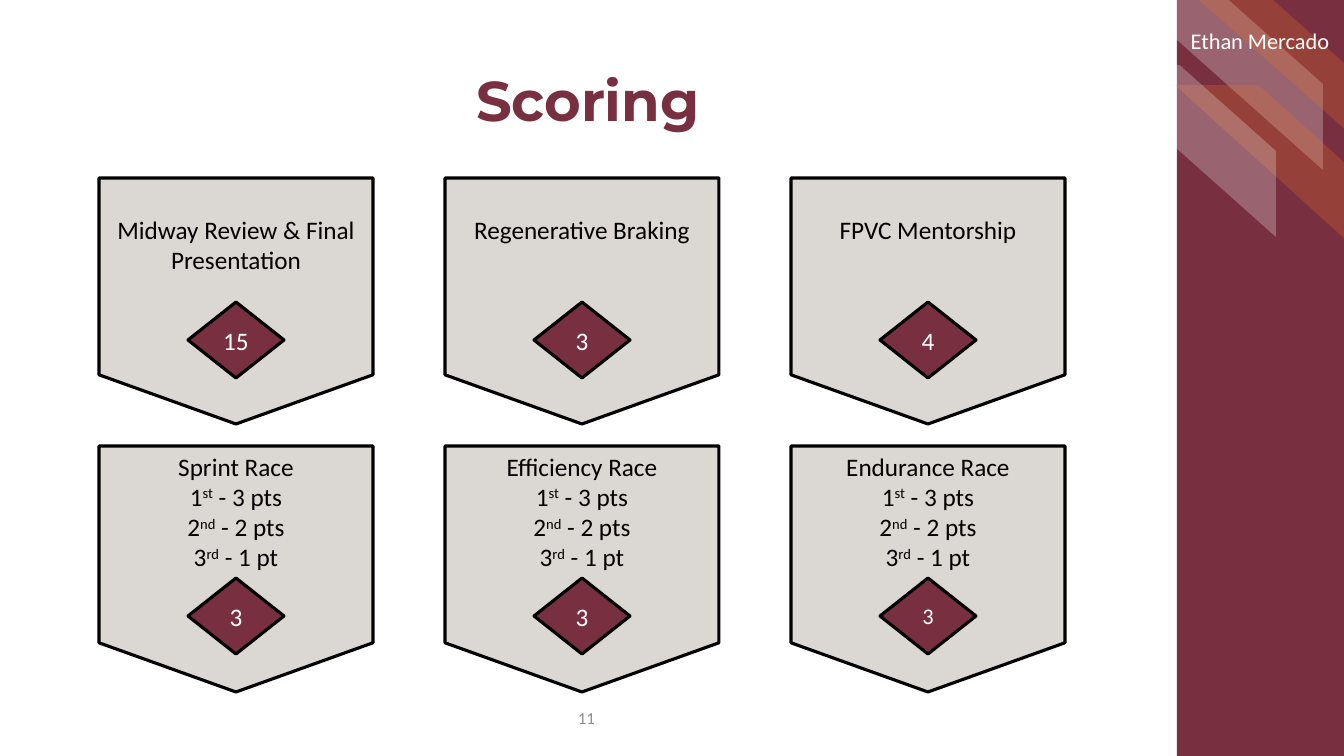
from lxml.etree import SubElement
from pptx import Presentation
from pptx.dml.color import RGBColor
from pptx.enum.shapes import MSO_SHAPE
from pptx.enum.text import MSO_ANCHOR, PP_ALIGN
from pptx.oxml.ns import qn
from pptx.util import Pt

SCALE = 12192000 / 1344
COLORS = {"garnet": "782F40", "orange": "EE7624", "white": "FFFFFF",
          "stone": "DBD7D2", "black": "000000", "gray": "8C8C8C"}

deck = Presentation()
deck.slide_width, deck.slide_height = int(1344 * SCALE), int(756 * SCALE)
slide = deck.slides.add_slide(deck.slide_layouts[6])


def draw(kind, box, fill=None, edge=None):
    """Add a preset shape, or a text box when kind is None, placed in px."""
    place = [int(n * SCALE) for n in box]
    if kind is None:
        return slide.shapes.add_textbox(*place)
    shape = slide.shapes.add_shape(kind, *place)
    shape.shadow.inherit = False
    shape.fill.solid()
    shape.fill.fore_color.rgb = RGBColor.from_string(COLORS[fill])
    if edge:
        shape.line.color.rgb = RGBColor.from_string(COLORS[edge])
        shape.line.width = Pt(2.25)
    else:
        shape.line.fill.background()
    return shape


def write(shape, lines, size, color, face="Calibri", bold=False,
          anchor=MSO_ANCHOR.MIDDLE, space=1.0):
    """Fill a shape with centred lines; each line is a list of runs.

    Every second run of a line is raised."""
    frame = shape.text_frame
    frame.word_wrap = True
    frame.vertical_anchor = anchor
    for i, line in enumerate(lines):
        para = frame.add_paragraph() if i else frame.paragraphs[0]
        para.alignment = PP_ALIGN.CENTER
        para.line_spacing = space
        for j, text in enumerate(line):
            run = para.add_run()
            run.text = text
            run.font.size = Pt(size)
            run.font.name = face
            run.font.bold = bold
            run.font.color.rgb = RGBColor.from_string(COLORS[color])
            if j % 2:
                run.font._element.set("baseline", "30000")


# Side bar with see-through stripes
draw(MSO_SHAPE.RECTANGLE, (1177, 0, 167, 756), "garnet")
stripes = [
    ((1130, -2, 193, 172), "white", 0.5),
    ((1175, 85, 170, 154), "orange", 0.507),
    ((1083, 65, 193, 172), "white", 0.5),
    ((1199, 0, 148, 131), "orange", 0.5),
]
for box, color, cut in stripes:
    stripe = draw(MSO_SHAPE.DIAGONAL_STRIPE, box, color)
    stripe.adjustments[0] = cut
    props = stripe._element.spPr
    props.find(qn("a:xfrm")).set("flipH", "1")
    tint = props.find(qn("a:solidFill")).find(qn("a:srgbClr"))
    SubElement(tint, qn("a:alpha")).set("val", "25000")

# Title, speaker and page number
title = draw(None, (50, 50, 1076, 106))
frame = title.text_frame
frame.margin_left = frame.margin_right = frame.margin_top = frame.margin_bottom = 0
write(title, [["Scoring"]], 40, "garnet", "Montserrat", True, space=0.9)
write(draw(None, (1176, 0, 168, 84)), [["Ethan Mercado"]], 16, "white", space=0.9)
write(draw(None, (546, 703, 81, 30)), [["11"]], 12, "gray")

# Score cards: three across, two down
places = [["1", "st", " - 3 pts"], ["2", "nd", " - 2 pts"], ["3", "rd", " - 1 pt"]]
rows = [
    # card top, diamond top, text inset, extra lines, cards (name, points, size)
    (178, 302, 36, [], [("Midway Review & Final Presentation", "15", 18),
                        ("Regenerative Braking", "3", 18),
                        ("FPVC Mentorship", "4", 18)]),
    (446, 578, 5, places, [("Sprint Race", "3", 18),
                           ("Efficiency Race", "3", 18),
                           ("Endurance Race", "3", 16)]),
]
for top, mark, inset, extra, cards in rows:
    for col, (name, points, size) in enumerate(cards):
        left = 99 + 346 * col
        card = draw(MSO_SHAPE.FLOWCHART_OFFPAGE_CONNECTOR,
                    (left, top, 274, 246), "stone", "black")
        card.text_frame.margin_top = int(inset * SCALE)
        write(card, [[name]] + extra, 18, "black", anchor=MSO_ANCHOR.TOP)
        gem = draw(MSO_SHAPE.FLOWCHART_DECISION,
                   (left + 89, mark, 96, 76), "garnet", "black")
        write(gem, [[points]], size, "white")

deck.save("out.pptx")
